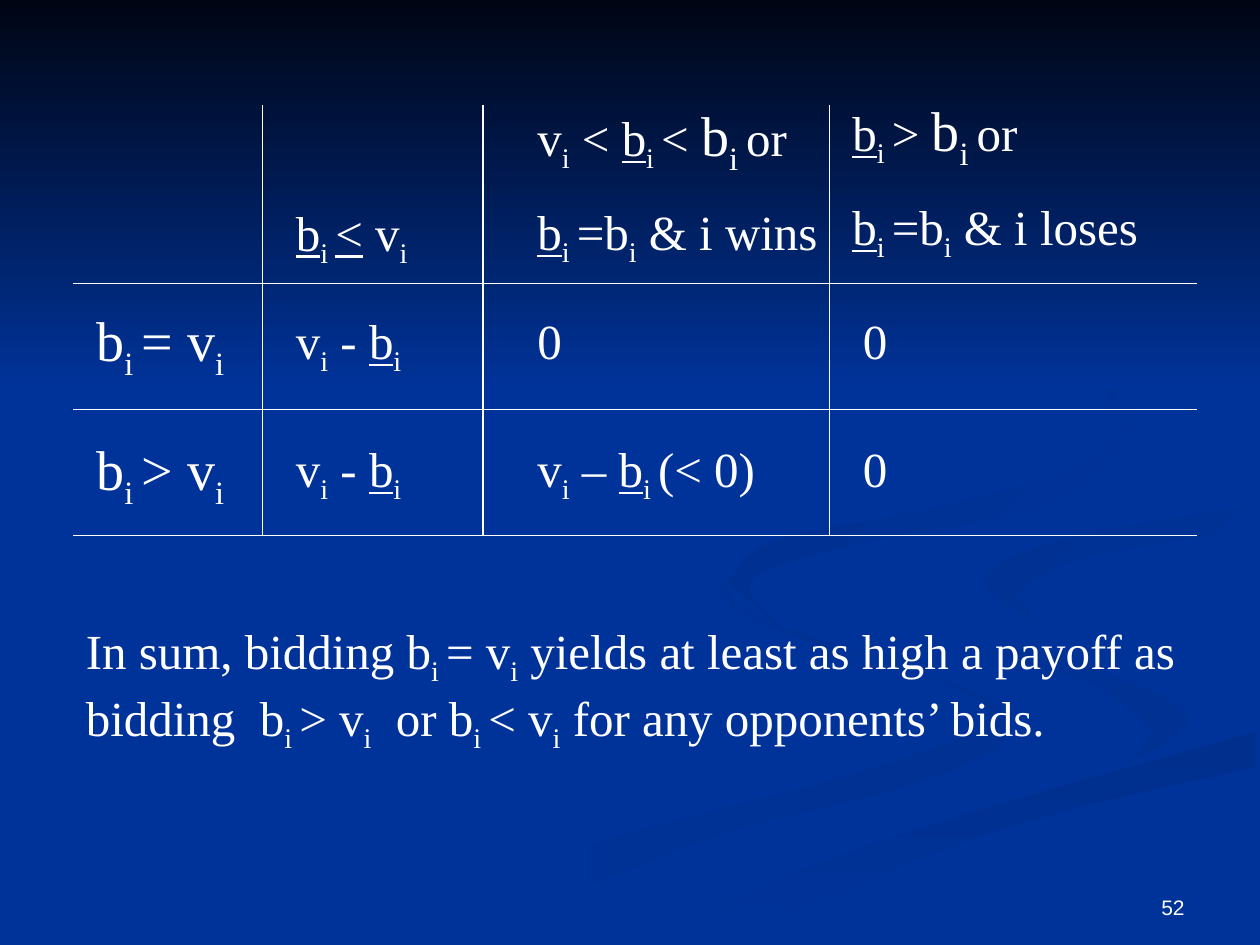
from lxml.etree import SubElement
from pptx import Presentation
from pptx.dml.color import RGBColor
from pptx.enum.shapes import MSO_CONNECTOR, MSO_SHAPE
from pptx.enum.text import MSO_ANCHOR, PP_ALIGN
from pptx.oxml.ns import qn
from pptx.util import Pt

WHITE = RGBColor(0xFF, 0xFF, 0xFF)
BLUE = RGBColor(0x00, 0x33, 0x99)
DEEP = RGBColor(0x00, 0x2F, 0x8D)
DUSK = RGBColor(0x00, 0x31, 0x93)
NIGHT = RGBColor(0x00, 0x05, 0x14)
SERIF = "Times New Roman"

# Each swoosh: first colour, last colour, clockwise angle, two edges
SWOOSHES = [
    (BLUE, DUSK, 0,
     [(414, 330), (428, 349), (491, 374), (562, 398), (574, 423),
      (519, 449), (406, 479), (260, 539)],
     [(216, 539), (330, 485), (492, 441), (564, 413), (541, 391),
      (440, 359), (410, 337)]),
    (BLUE, DUSK, 45,
     [(521, 334), (546, 359), (626, 382), (679, 410), (644, 436)],
     [(661, 418), (625, 392), (552, 369)]),
    (DEEP, BLUE, 90,
     [(362, 539), (454, 499), (550, 466), (718, 418)],
     [(718, 438), (565, 476), (411, 539)]),
    (DUSK, BLUE, 45,
     [(595, 357), (562, 331), (611, 307), (718, 289)],
     [(718, 302), (618, 319), (580, 340)]),
    (DEEP, BLUE, 45,
     [(549, 168), (622, 210), (644, 248), (594, 289), (492, 310),
      (429, 332), (448, 360)],
     [(416, 333), (443, 309), (549, 287), (631, 259), (631, 220)]),
]


def curve(knots, steps=6):
    """Catmull-Rom points through the knots."""
    ends = [knots[0], *knots, knots[-1]]
    dots = []
    for a, b, c, d in zip(ends, ends[1:], ends[2:], ends[3:]):
        for n in range(steps):
            t = n / steps
            dots.append(tuple(
                q + t / 2 * (r - p + t * (2 * p - 5 * q + 4 * r - s
                                          + t * (3 * (q - r) + s - p)))
                for p, q, r, s in zip(a, b, c, d)))
    return dots + [knots[-1]]


def shade(shape, first, last, angle):
    shape.shadow.inherit = False
    shape.line.fill.background()
    shape.fill.gradient()
    shape.fill.gradient_angle = -angle % 360
    for stop, color in zip(shape.fill.gradient_stops, (first, last)):
        stop.color.rgb = color


def backdrop(slide, width, height):
    slide.background.fill.solid()
    slide.background.fill.fore_color.rgb = BLUE
    for first, last, angle, edge, back in SWOOSHES:
        dots = [(Pt(x), Pt(y)) for x, y in curve(edge) + curve(back)]
        pen = slide.shapes.build_freeform(*dots[0])
        pen.add_line_segments(dots[1:])
        shade(pen.convert_to_shape(), first, last, angle)
    band = slide.shapes.add_shape(
        MSO_SHAPE.RECTANGLE, 0, 0, Pt(width), Pt(height))
    shade(band, NIGHT, BLUE, 90)


def rule(slide, *ends):
    line = slide.shapes.add_connector(MSO_CONNECTOR.STRAIGHT, *map(Pt, ends))
    line.line.color.rgb = WHITE
    line.line.width = Pt(0.75)
    SubElement(line._element.spPr, qn("a:effectLst"))


def write(slide, box, *lines, size=28, face=SERIF, wrap=True):
    """Runs part at |; a leading _ is subscript, ~ underlined, ^ larger."""
    frame = slide.shapes.add_textbox(*map(Pt, box)).text_frame
    frame.word_wrap = wrap
    for n, line in enumerate(lines):
        para = frame.add_paragraph() if n else frame.paragraphs[0]
        if n:
            para.space_before = Pt(14)
        para.font.size = Pt(size)
        para.font.name = face
        para.font.color.rgb = WHITE
        for part in line.split("|"):
            text = part.lstrip("_~^")
            marks = part[:len(part) - len(text)]
            run = para.add_run()
            run.text = text
            if "~" in marks:
                run.font.underline = True
            if "^" in marks:
                run.font.size = Pt(32)
            if "_" in marks:
                run._r.get_or_add_rPr().set("baseline", "-25000")
    return frame


def payoffs(slide, left, top, width, height):
    for n in range(3):
        y = top + height - 72 * n
        rule(slide, left, y, left + width, y)
    for x in (108, 234, 432):
        rule(slide, left + x, top, left + x, top + height)

    heads = [
        (120, 52, 41, ["~b|_i |~<| v|_i"]),
        (258, -6, 96, ["v|_i| < |~b|_i |< |^b|^_i |or",
                       "~b|_i |=b|_i| & i wins"]),
        (438, -9, 96, ["~b|_i |> |^b|^_i |or", "~b|_i |=b|_i| & i loses"]),
    ]
    for x, y, tall, lines in heads:
        write(slide, (left + x, top + y, 204, tall), *lines)

    rows = [
        ("b|_i |= v|_i", "v|_i| - |~b|_i", "0", "0"),
        ("b|_i |> v|_i", "v|_i| - |~b|_i", "v|_i| – |~b|_i |(< 0)", "0"),
    ]
    for n, (name, *cells) in enumerate(rows):
        y = top + 114 + 73 * n
        write(slide, (left + 6, y - 3 + n, 90, 45), name, size=32, wrap=False)
        for x, cell in zip((120, 258, 444), cells):
            write(slide, (left + x, y, 204, 41), cell)


def number(slide, *box):
    frame = write(slide, box, "52", size=12, face="Arial")
    frame.vertical_anchor = MSO_ANCHOR.BOTTOM
    frame.paragraphs[0].alignment = PP_ALIGN.RIGHT


def main():
    deck = Presentation()
    deck.slide_width, deck.slide_height = Pt(720), Pt(540)
    slide = deck.slides.add_slide(deck.slide_layouts[6])
    backdrop(slide, 720, 222)
    payoffs(slide, 42, 60, 642, 246)
    write(slide, (42, 351, 654, 75),
          "In sum, bidding b|_i |= v|_i| yields at least as high a payoff as "
          "bidding  b|_i |> v|_i|  or b|_i |< v|_i| for any opponents’ bids.")
    number(slide, 516, 492, 168, 37)
    deck.save("out.pptx")


if __name__ == "__main__":
    main()
